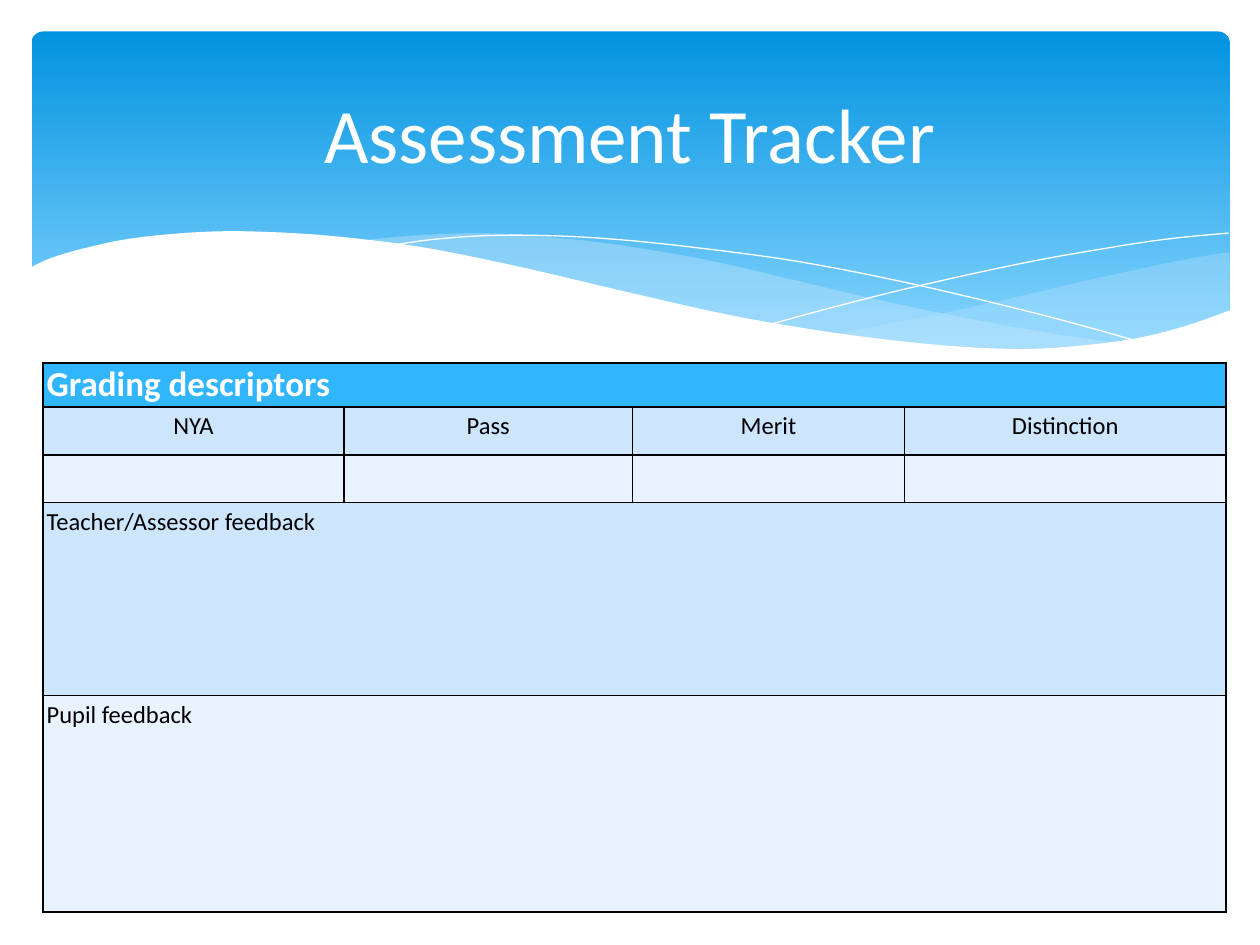
from dataclasses import dataclass
from typing import Optional

from lxml.etree import SubElement
from pptx import Presentation
from pptx.dml.color import RGBColor
from pptx.enum.shapes import MSO_SHAPE
from pptx.enum.text import MSO_ANCHOR, PP_ALIGN
from pptx.oxml.ns import qn
from pptx.util import Inches, Pt

COLORS = {
    "white": "FFFFFF", "black": "000000",
    "banner_top": "0293E0", "banner_bottom": "83D3FE", "wave": "C6E7FC",
    "heading": "31B6FD", "band_dark": "CEE5FE", "band_light": "E8F3FF",
}
FONT = "Calibri"
Point = tuple[float, float]


@dataclass
class Wave:
    """Curved strokes joined end to end, either filled or drawn as a hairline."""
    strokes: list[list[Point]]
    fill: Optional[str] = None
    opacity: int = 100


@dataclass
class Row:
    height: float
    texts: list[str]
    fill: str
    size: int = 14
    color: str = "black"
    bold: bool = False
    spacing: float = 1.15


WAVES = [
    Wave([[(9.76, 2), (9.35, 2.07), (8.61, 2.23), (7.79, 2.42), (7.06, 2.57), (6.61, 2.65)],
          [(6.61, 2.65), (7.05, 2.71), (7.57, 2.76), (8.14, 2.78), (8.63, 2.75),
           (9.05, 2.69), (9.42, 2.59), (9.76, 2.47)]], "wave", 29),
    Wave([[(8.93, 2.73), (8.37, 2.65), (7.75, 2.54), (7.06, 2.4), (6.29, 2.22), (5.69, 2.08),
           (5.14, 1.98), (4.65, 1.91), (4.2, 1.87), (3.8, 1.85), (3.28, 1.87), (2.86, 1.91)],
          [(2.86, 1.91), (3.42, 1.99), (4.04, 2.11), (4.91, 2.32), (5.66, 2.48), (6.34, 2.61),
           (6.95, 2.7), (7.48, 2.76), (8.07, 2.78), (8.57, 2.77), (8.93, 2.73)]], "wave", 40),
    Wave([[(3.09, 1.95), (3.44, 1.9), (3.87, 1.87), (4.33, 1.87), (4.89, 1.9), (5.56, 1.97),
           (6.36, 2.08), (7.27, 2.26), (8.31, 2.51), (9.07, 2.72)]]),
    Wave([[(6.13, 2.57), (6.53, 2.46), (7.2, 2.29), (8.06, 2.1), (8.66, 1.99),
           (9.24, 1.9), (9.75, 1.85)]]),
    Wave([[(9.77, 2.46), (9.4, 2.59), (8.99, 2.69), (8.5, 2.75), (8.09, 2.77), (7.61, 2.75),
           (7.08, 2.7), (6.48, 2.62), (5.79, 2.5), (5.03, 2.33), (4.18, 2.13), (3.4, 1.97),
           (2.71, 1.88), (2.11, 1.84), (1.61, 1.84), (1.06, 1.89), (0.67, 1.97),
           (0.4, 2.05), (0.23, 2.13)],
          [(0.23, 3.29), (9.77, 3.29)]], "white"),
]

COLUMN_WIDTHS = [2.39, 2.29, 2.16, 2.55]
GRADES = ["NYA", "Pass", "Merit", "Distinction"]
ROWS = [
    Row(0.35, ["Grading descriptors"], "heading", 20, "white", True, 1.0),
    Row(0.38, GRADES, "band_dark"),
    Row(0.38, [""] * len(GRADES), "band_light"),
    Row(1.53, ["Teacher/Assessor feedback"], "band_dark"),
    Row(1.72, ["Pupil feedback"], "band_light"),
]


def rgb(name: str) -> RGBColor:
    return RGBColor.from_string(COLORS[name])


def smooth(anchors: list[Point], steps: int = 5) -> list[Point]:
    """Sample a Catmull-Rom curve through the anchors."""
    if len(anchors) < 3:
        return anchors
    padded = [anchors[0], *anchors, anchors[-1]]
    curve = [anchors[0]]
    for a, b, c, d in zip(padded, padded[1:], padded[2:], padded[3:]):
        for step in range(1, steps + 1):
            t = step / steps
            curve.append(tuple(
                q + t / 2 * (r - p + t * (2 * p - 5 * q + 4 * r - s + t * (3 * (q - r) + s - p)))
                for p, q, r, s in zip(a, b, c, d)))
    return curve


def draw_banner(slide) -> None:
    banner = slide.shapes.add_shape(MSO_SHAPE.ROUNDED_RECTANGLE, Inches(0.25), Inches(0.25),
                                    Inches(9.51), Inches(2.7))
    banner.shadow.inherit = False
    banner.adjustments[0] = 0.034
    banner.line.fill.background()
    banner.fill.gradient()
    banner.fill.gradient_angle = 270
    stops = [(0, "banner_top"), (0.9, "banner_bottom")]
    for stop, (position, color) in zip(banner.fill.gradient_stops, stops):
        stop.position = position
        stop.color.rgb = rgb(color)


def draw_wave(slide, wave: Wave) -> None:
    outline = [(Inches(x), Inches(y)) for stroke in wave.strokes for x, y in smooth(stroke)]
    builder = slide.shapes.build_freeform(*outline[0])
    builder.add_line_segments(outline[1:], close=wave.fill is not None)
    shape = builder.convert_to_shape()
    shape.shadow.inherit = False
    if wave.fill is None:
        shape.fill.background()
        shape.line.color.rgb = rgb("white")
        shape.line.width = Pt(0)
        return
    shape.line.fill.background()
    shape.fill.solid()
    shape.fill.fore_color.rgb = rgb(wave.fill)
    if wave.opacity < 100:
        color = shape.fill._xPr.find(qn("a:solidFill"))[0]
        SubElement(color, qn("a:alpha"), val=str(wave.opacity * 1000))


def draw_title(slide, text: str) -> None:
    title = slide.shapes.add_textbox(Inches(0.5), Inches(0.37), Inches(9), Inches(1.37))
    frame = title.text_frame
    frame.word_wrap = True
    frame.vertical_anchor = MSO_ANCHOR.MIDDLE
    heading = frame.paragraphs[0]
    heading.text = text
    heading.alignment = PP_ALIGN.CENTER
    heading.font.name = FONT
    heading.font.size = Pt(44)
    heading.font.color.rgb = rgb("white")


def style_cell(cell, fill: str) -> None:
    cell.margin_left = cell.margin_right = Inches(0.03)
    cell.margin_top = cell.margin_bottom = 0
    properties = cell._tc.get_or_add_tcPr()
    for side in ("lnL", "lnR", "lnT", "lnB"):
        border = SubElement(properties, qn(f"a:{side}"), w=str(Pt(1)))
        SubElement(SubElement(border, qn("a:solidFill")), qn("a:srgbClr"), val=COLORS["black"])
    cell.fill.solid()
    cell.fill.fore_color.rgb = rgb(fill)


def write_cell(cell, text: str, row: Row) -> None:
    paragraph = cell.text_frame.paragraphs[0]
    paragraph.text = text
    paragraph.line_spacing = row.spacing
    paragraph.alignment = PP_ALIGN.CENTER if len(row.texts) > 1 else PP_ALIGN.LEFT
    paragraph.font.name = FONT
    paragraph.font.size = Pt(row.size)
    paragraph.font.bold = row.bold
    paragraph.font.color.rgb = rgb(row.color)


def draw_tracker(slide) -> None:
    table = slide.shapes.add_table(
        len(ROWS), len(COLUMN_WIDTHS), Inches(0.34), Inches(2.88),
        Inches(sum(COLUMN_WIDTHS)), Inches(sum(row.height for row in ROWS))).table
    table.first_row = table.horz_banding = False
    for column, width in zip(table.columns, COLUMN_WIDTHS):
        column.width = Inches(width)
    for index, row in enumerate(ROWS):
        table.rows[index].height = Inches(row.height)
        cells = list(table.rows[index].cells)
        for cell in cells:
            style_cell(cell, row.fill)
        if len(row.texts) == 1:
            cells[0].merge(cells[-1])
        for cell, text in zip(cells, row.texts):
            write_cell(cell, text, row)


def main() -> None:
    presentation = Presentation()
    presentation.slide_width, presentation.slide_height = Inches(10), Inches(7.5)
    slide = presentation.slides.add_slide(presentation.slide_layouts[6])
    draw_banner(slide)
    for wave in WAVES:
        draw_wave(slide, wave)
    draw_title(slide, "Assessment Tracker")
    draw_tracker(slide)
    presentation.save("out.pptx")


if __name__ == "__main__":
    main()
